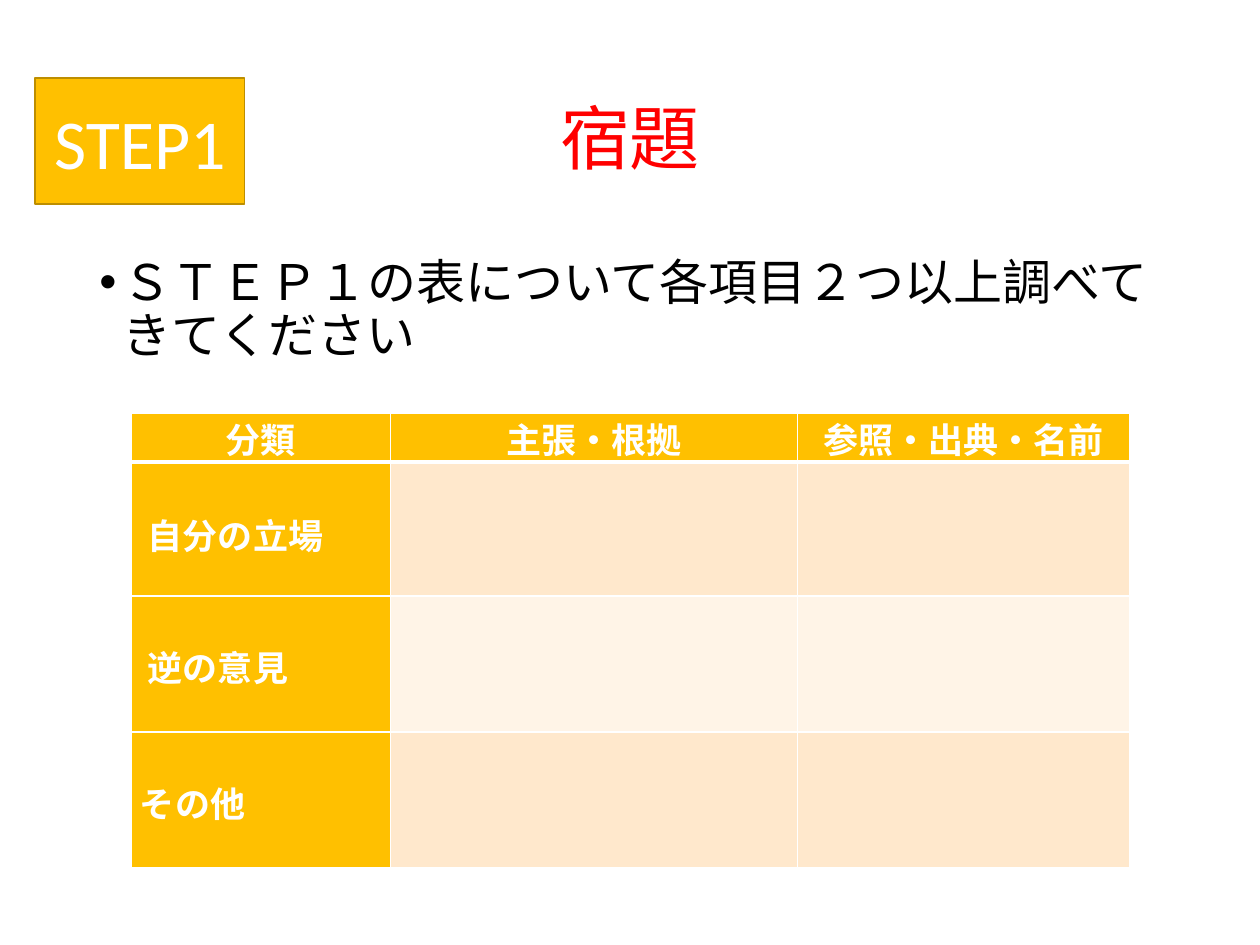
from dataclasses import dataclass

from lxml import etree
from pptx import Presentation
from pptx.dml.color import RGBColor
from pptx.enum import shapes, text
from pptx.oxml import ns
from pptx.util import Pt

COLORS = {
    "gold": "FFC000", "gold_edge": "BD8E00", "band_dark": "FFE8CC",
    "band_light": "FFF4E7", "white": "FFFFFF", "red": "FF0000", "black": "000000",
}
FONT = "Calibri"


@dataclass
class Row:
    label: str
    height: float
    band: str
    indent: float = 0
    drop: float = 3  # extra top inset below the cell's middle


HEADERS = ("分類", "主張・根拠", "参照・出典・名前")
COLUMN_WIDTHS = (148.3, 232.3, 190.1)
HEADER_HEIGHT = 28
ROWS = (
    Row("自分の立場", 76.5, "band_dark", 4.5, 6),
    Row("逆の意見", 77.7, "band_light", 4.5),
    Row("その他", 77.7, "band_dark"),
)


def rgb(name: str) -> RGBColor:
    return RGBColor.from_string(COLORS[name])


def write(frame, words: str, size: float, color: str, align, bold: bool = False):
    """Put one formatted paragraph in a text frame and return it."""
    frame.word_wrap = True
    paragraph = frame.paragraphs[0]
    paragraph.alignment = align
    run = paragraph.add_run()
    run.text = words
    run.font.color.rgb = rgb(color)
    for name, value in {"name": FONT, "size": Pt(size), "bold": bold}.items():
        setattr(run.font, name, value)
    return paragraph


def add_borders(cell, bottom: float) -> None:
    properties = cell._tc.get_or_add_tcPr()
    widths = {"lnL": 1, "lnR": 1, "lnT": 1, "lnB": bottom}
    for position, (tag, width) in enumerate(widths.items()):
        line = etree.Element(ns.qn(f"a:{tag}"), w=str(Pt(width)))
        fill = etree.SubElement(line, ns.qn("a:solidFill"))
        etree.SubElement(fill, ns.qn("a:srgbClr"), val=COLORS["white"])
        properties.insert(position, line)


def style_cell(cell, fill: str, bottom: float = 1, indent: float = 0, drop: float = 0) -> None:
    cell.fill.solid()
    cell.fill.fore_color.rgb = rgb(fill)
    layout = {
        "margin_left": Pt(5 + indent), "margin_right": Pt(5),
        "margin_top": Pt(drop), "margin_bottom": 0,
        "vertical_anchor": text.MSO_ANCHOR.MIDDLE,
    }
    for name, value in layout.items():
        setattr(cell, name, value)
    add_borders(cell, bottom)


def add_research_table(slide) -> None:
    heights = (HEADER_HEIGHT, *(row.height for row in ROWS))
    table = slide.shapes.add_table(
        len(heights), len(HEADERS), Pt(75), Pt(236),
        Pt(sum(COLUMN_WIDTHS)), Pt(sum(heights))).table
    for column, width in zip(table.columns, COLUMN_WIDTHS):
        column.width = Pt(width)
    for table_row, height in zip(table.rows, heights):
        table_row.height = Pt(height)

    for index, header in enumerate(HEADERS):
        cell = table.cell(0, index)
        style_cell(cell, "gold", bottom=3)
        write(cell.text_frame, header, 20, "white", text.PP_ALIGN.CENTER, True)

    for number, row in enumerate(ROWS, start=1):
        label = table.cell(number, 0)
        style_cell(label, "gold", indent=row.indent, drop=row.drop)
        write(label.text_frame, row.label, 20, "white", text.PP_ALIGN.LEFT, True)
        for index in range(1, len(HEADERS)):
            style_cell(table.cell(number, index), row.band)
        if number == 1:  # the heavy rule is shared with the header
            for index in range(len(HEADERS)):
                edge = table.cell(number, index)._tc.tcPr.find(ns.qn("a:lnT"))
                edge.set("w", str(Pt(3)))


def add_step_badge(slide) -> None:
    badge = slide.shapes.add_shape(
        shapes.MSO_SHAPE.RECTANGLE, Pt(20.2), Pt(44.6), Pt(119.5), Pt(72))
    badge.shadow.inherit = False
    badge.fill.solid()
    badge.fill.fore_color.rgb = rgb("gold")
    badge.line.color.rgb = rgb("gold_edge")
    badge.line.width = Pt(1)
    badge.text_frame.vertical_anchor = text.MSO_ANCHOR.MIDDLE
    write(badge.text_frame, "STEP1", 40, "white", text.PP_ALIGN.CENTER)


def add_instruction(slide) -> None:
    box = slide.shapes.add_textbox(Pt(49.7), Pt(144), Pt(620.6), Pt(80))
    paragraph = write(box.text_frame, "ＳＴＥＰ１の表について各項目２つ以上調べてきてください",
                      28, "black", text.PP_ALIGN.LEFT)
    paragraph.line_spacing = 0.9
    paragraph.space_before = Pt(7.5)
    properties = paragraph._p.get_or_add_pPr()
    properties.set("marL", str(Pt(13.5)))
    properties.set("indent", str(Pt(-13.5)))
    etree.SubElement(properties, ns.qn("a:buFont"), typeface="Arial")
    etree.SubElement(properties, ns.qn("a:buChar"), char="•")


def main() -> None:
    deck = Presentation()
    deck.slide_width, deck.slide_height = Pt(720), Pt(540)
    slide = deck.slides.add_slide(deck.slide_layouts[5])

    # Title
    title = slide.shapes.title
    place = {"left": 49.7, "top": 28.8, "width": 620.6, "height": 104.4}
    for name, value in place.items():
        setattr(title, name, Pt(value))
    title.text_frame.vertical_anchor = text.MSO_ANCHOR.MIDDLE
    heading = write(title.text_frame, "宿題", 40, "red", text.PP_ALIGN.CENTER)
    heading.line_spacing = 0.9

    # Homework task, step badge and table
    add_instruction(slide)
    add_step_badge(slide)
    add_research_table(slide)
    deck.save("out.pptx")


if __name__ == "__main__":
    main()
